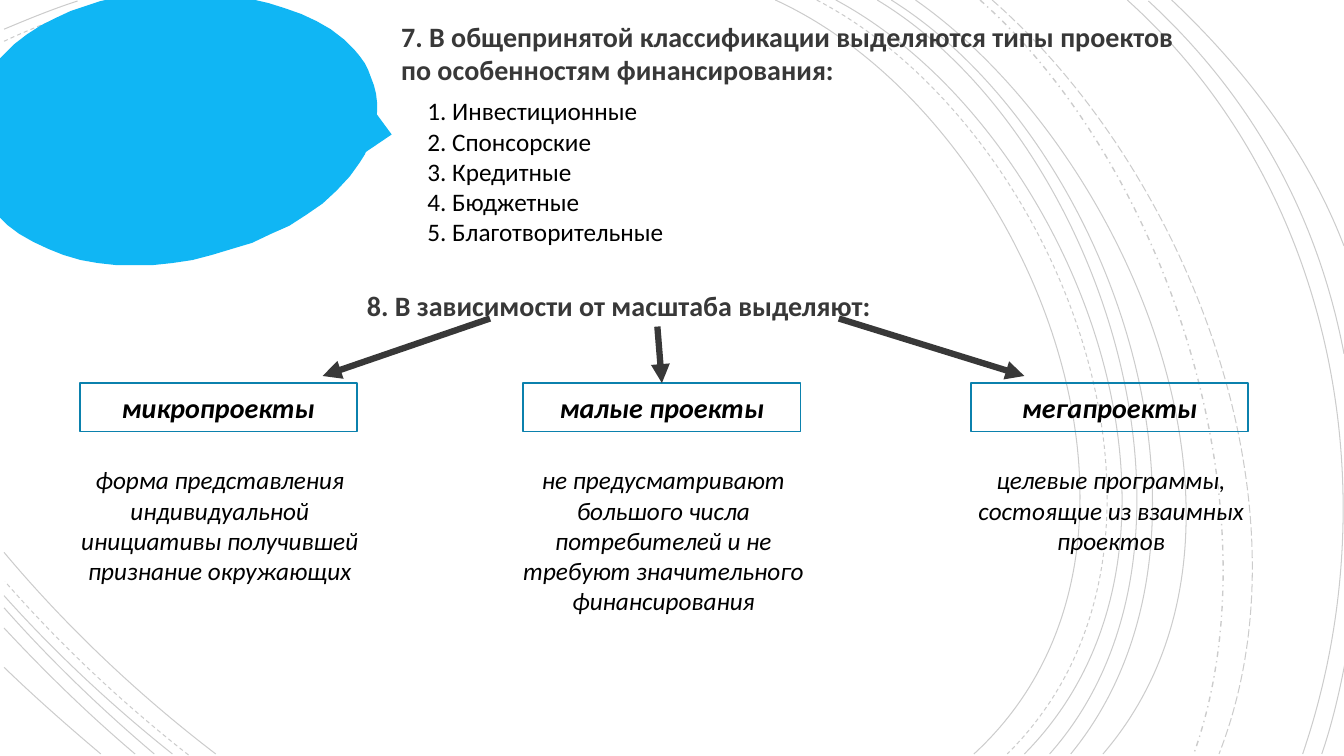
from lxml.etree import SubElement
from pptx import Presentation
from pptx.dml.color import RGBColor
from pptx.enum.dml import MSO_LINE as Dash
from pptx.enum.shapes import MSO_CONNECTOR as Connector, MSO_SHAPE as Shape
from pptx.enum.text import MSO_ANCHOR as Anchor, MSO_AUTO_SIZE as AutoSize, PP_ALIGN as Align
from pptx.oxml.ns import qn
from pptx.util import Inches, Pt

# Background arcs: start, two control points, end
SOLID_ARCS = [
    [(7.69, 0), (10.2, 1.15), (11.92, 5.4), (9.66, 7.48)],
    [(0.04, 0.62), (0.57, 0.34), (1.17, 0.16), (1.73, 0.01)],
    [(2.14, 7.48), (1.38, 6.9), (0.66, 6.22), (0.04, 5.48)],
    [(8.29, 0), (10.65, 1.27), (12.25, 5.37), (10.16, 7.48)],
    [(0.04, 0.29), (0.28, 0.19), (0.52, 0.09), (0.77, 0.01)],
    [(1.71, 7.48), (1.12, 7.01), (0.55, 6.48), (0.04, 5.91)],
    [(8.7, 0), (10.91, 1.33), (12.25, 5.41), (10.41, 7.48)],
    [(1.53, 7.48), (1.01, 7.04), (0.5, 6.55), (0.04, 6.03)],
    [(8.84, 0), (11.04, 1.38), (12.38, 5.33), (10.62, 7.48)],
    [(1.34, 7.48), (0.88, 7.09), (0.45, 6.67), (0.04, 6.23)],
    [(9.08, 0), (11.18, 1.47), (12.82, 5.29), (10.94, 7.48)],
    [(1, 7.48), (0.68, 7.21), (0.35, 6.92), (0.04, 6.62)],
    [(11.18, 0), (13.24, 1.85), (13.8, 4.9), (12.92, 7.48)],
    [(11.39, 0.01), (12.42, 0.96), (13.07, 2.14), (13.33, 3.51)],
    [(13.34, 6.58), (13.28, 6.89), (13.21, 7.19), (13.11, 7.48)],
    [(11.62, 0), (12.35, 0.69), (12.97, 1.5), (13.33, 2.44)],
]
DASHED_ARCS = [
    [(8.1, 0), (10.5, 1.25), (12.12, 5.37), (9.99, 7.48)],
    [(0.04, 0.41), (0.38, 0.25), (0.74, 0.12), (1.1, 0.01)],
    [(1.87, 7.49), (1.22, 6.98), (0.6, 6.4), (0.05, 5.77)],
]
DASH_DOT_ARC = [(9.72, 0), (11.59, 1.66), (12.69, 5.09), (11.84, 7.48)]
LONG_DASH_ARC = [(9.84, 0), (11.77, 1.69), (13.06, 4.99), (12.09, 7.48)]

BUBBLE_OUTLINE = [
    (1.33, 2.63), (1.52, 2.63), (1.71, 2.61), (1.91, 2.58), (2.1, 2.53), (2.3, 2.47),
    (2.5, 2.41), (2.69, 2.32), (2.87, 2.24), (3.04, 2.13), (3.2, 2.02), (3.34, 1.89),
    (3.47, 1.75), (3.52, 1.68), (3.57, 1.61), (3.62, 1.53), (3.65, 1.45), (3.68, 1.37),
    (3.71, 1.28), (3.73, 1.2), (3.74, 1.11), (3.74, 1.02), (3.73, 0.93), (3.71, 0.85),
    (3.68, 0.77), (3.65, 0.69), (3.62, 0.63), (3.57, 0.56), (3.52, 0.5), (3.41, 0.39),
    (3.28, 0.29), (3.14, 0.21), (2.99, 0.14), (2.82, 0.08), (2.66, 0.03), (2.53, 0),
    (1.05, 0), (1, 0.01), (0.85, 0.06), (0.7, 0.11), (0.55, 0.18), (0.41, 0.25),
    (0.27, 0.34), (0.14, 0.44), (0.03, 0.55), (0, 0.58), (0, 2.16), (0.07, 2.23),
    (0.19, 2.32), (0.33, 2.4), (0.48, 2.47), (0.63, 2.53), (0.8, 2.58), (0.97, 2.61),
    (1.15, 2.63),
]

FINANCING_TYPES = ["Инвестиционные", "Спонсорские", "Кредитные", "Бюджетные", "Благотворительные"]

# Scale: left edge, name, description, description height
SCALES = [
    (0.79, "микропроекты",
     "форма представления индивидуальной инициативы получившей признание окружающих", 1.92),
    (5.19, "малые проекты",
     "не предусматривают большого числа потребителей и не требуют значительного финансирования", 1.92),
    (9.63, "мегапроекты", "целевые программы, состоящие из взаимных проектов", 1.01),
]


def color(hex_code):
    return RGBColor.from_string(hex_code)


class SlideArtist:
    font = "Calibri"
    black, heading_gray = "000000", "383838"
    bubble_blue, border_blue = "10B6F4", "0B81AD"

    def __init__(self, slide):
        self.slide = slide
        self.shapes = slide.shapes

    def outline(self, points, close):
        (x, y), *rest = [(Inches(px), Inches(py)) for px, py in points]
        builder = self.shapes.build_freeform(x, y)
        builder.add_line_segments(rest, close=close)
        shape = builder.convert_to_shape()
        shape.shadow.inherit = False
        return shape

    def arc(self, points, dash=Dash.SOLID, width=0.75):
        arc = self.outline(points, close=False)
        arc.fill.background()
        arc.line.width = Pt(width)
        arc.line.color.rgb = color(self.black)
        arc.line.dash_style = dash
        ink = arc.element.spPr.find(qn("a:ln")).find(qn("a:solidFill"))[0]
        SubElement(ink, qn("a:alpha")).set("val", "20000")
        # Turn the three segments into one cubic curve
        segments = list(arc.element.iter(qn("a:lnTo")))
        curve = SubElement(segments[0].getparent(), qn("a:cubicBezTo"))
        for segment in segments:
            curve.append(segment[0])
            segment.getparent().remove(segment)

    def paint(self, shape):
        shape.shadow.inherit = False
        shape.fill.solid()
        shape.fill.fore_color.rgb = color(self.bubble_blue)
        shape.line.fill.background()

    def bubble(self):
        pointer = self.shapes.add_shape(
            Shape.ISOSCELES_TRIANGLE, Inches(2.78), Inches(0.89), Inches(1.46), Inches(0.76))
        pointer.rotation = 99.8
        self.paint(pointer)
        self.paint(self.outline(BUBBLE_OUTLINE, close=True))

    def add_lines(self, frame, lines, size, ink, bold, italic, align):
        for number, line in enumerate(lines):
            paragraph = frame.add_paragraph() if number else frame.paragraphs[0]
            paragraph.alignment = align
            run = paragraph.add_run()
            run.text = line
            font = run.font
            font.name, font.size, font.bold, font.italic = self.font, Pt(size), bold, italic
            font.color.rgb = color(ink)

    def text(self, left, top, width, height, lines, size=18, ink=black,
             bold=False, italic=False, align=Align.LEFT, wrap=True):
        box = self.shapes.add_textbox(Inches(left), Inches(top), Inches(width), Inches(height))
        frame = box.text_frame
        frame.word_wrap = wrap
        frame.auto_size = AutoSize.SHAPE_TO_FIT_TEXT
        self.add_lines(frame, lines, size, ink, bold, italic, align)

    def heading(self, left, top, width, height, line, wrap=True):
        self.text(left, top, width, height, [line], 20, self.heading_gray, bold=True, wrap=wrap)

    def framed_name(self, left, name):
        box = self.shapes.add_shape(
            Shape.RECTANGLE, Inches(left), Inches(3.8), Inches(2.75), Inches(0.48))
        box.shadow.inherit = False
        box.fill.background()
        box.line.color.rgb = color(self.border_blue)
        box.line.width = Pt(1.25)
        box.text_frame.word_wrap = True
        box.text_frame.vertical_anchor = Anchor.MIDDLE
        self.add_lines(box.text_frame, [name], 20, self.black, True, True, Align.CENTER)
        return box

    def arrow(self, x1, y1, x2, y2):
        arrow = self.shapes.add_connector(
            Connector.STRAIGHT, Inches(x1), Inches(y1), Inches(x2), Inches(y2))
        arrow.line.color.rgb = color(self.heading_gray)
        arrow.line.width = Pt(4.5)
        properties = arrow.element.spPr
        SubElement(properties.find(qn("a:ln")), qn("a:tailEnd")).set("type", "triangle")
        SubElement(properties, qn("a:effectLst"))
        return arrow


def main():
    deck = Presentation()
    deck.slide_width, deck.slide_height = Inches(13.33), Inches(7.5)
    artist = SlideArtist(deck.slides.add_slide(deck.slide_layouts[6]))

    # Background
    for points in SOLID_ARCS:
        artist.arc(points)
    for points in DASHED_ARCS:
        artist.arc(points, Dash.DASH)
    artist.arc(DASH_DOT_ARC, Dash.DASH_DOT, 1)
    artist.arc(LONG_DASH_ARC, Dash.LONG_DASH)
    artist.bubble()

    # Types by financing
    artist.heading(3.88, 0.14, 8.11, 0.77, "7. В общепринятой классификации выделяются "
                   "типы проектов по особенностям финансирования:")
    artist.text(4.14, 0.9, 6.67, 1.62,
                [f"{number}. {kind}" for number, kind in enumerate(FINANCING_TYPES, 1)])

    # Types by scale
    artist.heading(3.54, 2.81, 5.96, 0.44, "8. В зависимости от масштаба выделяют:", wrap=False)
    names = []
    for left, name, description, height in SCALES:
        names.append(artist.framed_name(left, name))
        artist.text(left - 0.13, 4.56, 3.04, height, [description], italic=True, align=Align.CENTER)

    # Arrows from the heading to the scales
    artist.arrow(4.86, 3.16, 3.2, 3.73)
    artist.arrow(6.52, 3.24, 6.56, 3.8).end_connect(names[1], 0)
    artist.arrow(8.32, 3.16, 10.16, 3.73)

    deck.save("out.pptx")


if __name__ == "__main__":
    main()
